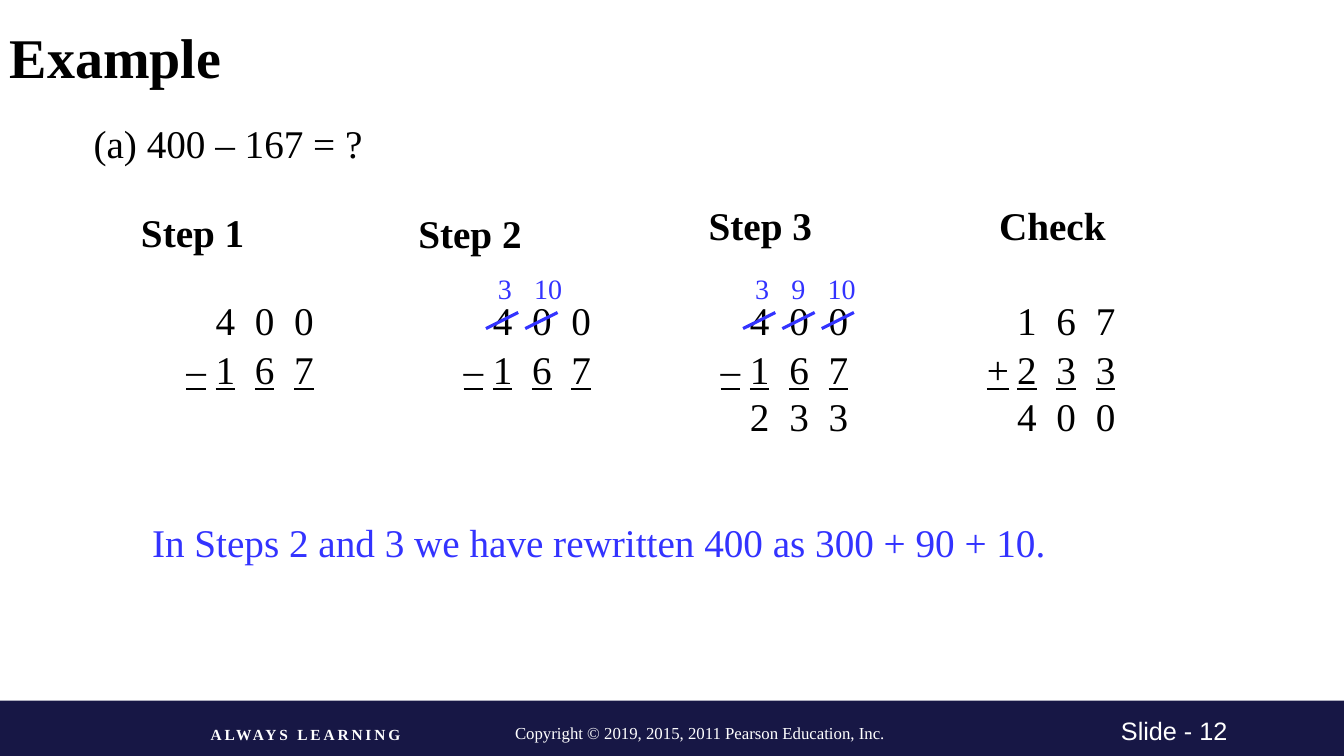
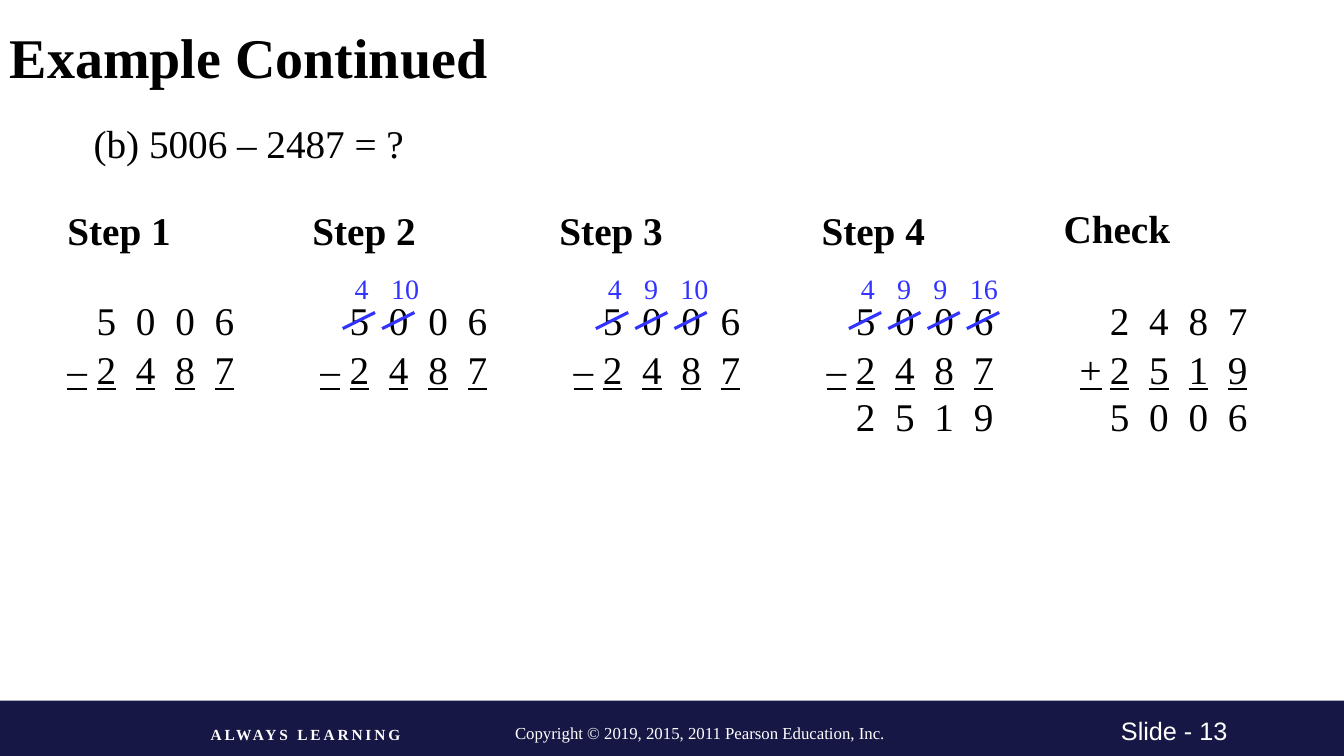
import dataclasses

import pptx
import pptx.dml.color
import pptx.enum.shapes
import pptx.enum.text
import pptx.oxml.ns
import pptx.util
from lxml import etree

Inches = pptx.util.Inches
Pt = pptx.util.Pt

SLIDE_WIDTH, SLIDE_HEIGHT = 13.33, 7.5
SERIF, SANS = "Times New Roman", "Arial"
BLACK, WHITE, NAVY, BLUE = "000000", "FFFFFF", "171745", "3333FF"
BODY_SIZE, CARRY_SIZE = 28, 20

# Digit grid of a worked sum, measured from the left of its box
SUM_TOP, SUM_WIDTH = 2.89, 2.16
FIRST_DIGIT = {"–": 0.29, "+": 0.3}
DIGIT_PITCH = 0.39
CARRY_START, CARRY_PITCH = 0.34, 0.36
STRIKE_START, STRIKE_WIDTH, STRIKE_HEIGHT = 0.32, 0.32, 0.16


@dataclasses.dataclass
class WorkedSum:
    heading: str
    heading_left: float
    heading_top: float
    left: float
    upper: str
    lower: str
    sign: str = "–"
    carries: tuple = ()
    answer: str = ""


def colour(hex_value):
    return pptx.dml.color.RGBColor.from_string(hex_value)


def add_text(slide, box, text, size=BODY_SIZE, ink=BLACK, bold=False,
             font=SERIF, wrap=True, tabs=()):
    """Place text in a box and return its text frame."""
    frame = slide.shapes.add_textbox(*map(Inches, box)).text_frame
    frame.word_wrap = wrap
    frame.text = text
    for paragraph in frame.paragraphs:
        if tabs:
            set_tabs(paragraph, tabs)
        for run in paragraph.runs:
            run.font.name = font
            run.font.size = Pt(size)
            run.font.bold = bold
            run.font.color.rgb = colour(ink)
    return frame


def set_tabs(paragraph, positions):
    qn = pptx.oxml.ns.qn
    properties = paragraph._p.get_or_add_pPr()
    stops = etree.SubElement(properties, qn("a:tabLst"))
    for position in positions:
        etree.SubElement(stops, qn("a:tab"),
                         pos=str(Inches(position)), algn="l")


def add_strike(slide, left, bottom):
    strike = slide.shapes.add_connector(
        pptx.enum.shapes.MSO_CONNECTOR.STRAIGHT,
        Inches(left), Inches(bottom),
        Inches(left + STRIKE_WIDTH), Inches(bottom - STRIKE_HEIGHT))
    strike.line.color.rgb = colour(BLUE)
    strike.line.width = Pt(2.25)
    etree.SubElement(strike._element.spPr, pptx.oxml.ns.qn("a:effectLst"))


def add_footer(slide, number, top=6.95):
    # Band
    band = slide.shapes.add_shape(
        pptx.enum.shapes.MSO_SHAPE.RECTANGLE, 0, Inches(top),
        Inches(SLIDE_WIDTH), Inches(SLIDE_HEIGHT - top))
    band.shadow.inherit = False
    band.fill.solid()
    band.fill.fore_color.rgb = colour(NAVY)
    band.line.fill.background()

    # Copyright, slide number and motto
    add_text(slide, (5.01, top + 0.17, 5.19, 0.3),
             "Copyright © 2019, 2015, 2011 Pearson Education, Inc.", 12, WHITE)
    add_text(slide, (11.02, top + 0.1, 2, 0.4), f"Slide - {number}",
             18, WHITE, font=SANS)
    motto = add_text(slide, (1.99, top + 0.19, 3.09, 0.29),
                     "ALWAYS LEARNING", 11, WHITE, bold=True)
    motto.paragraphs[0].runs[0].font._element.set("spc", "200")


def add_title(slide, text):
    title = add_text(slide, (0, 0.09, SLIDE_WIDTH, 1.05), text, 40, bold=True)
    title.vertical_anchor = pptx.enum.text.MSO_ANCHOR.MIDDLE
    title.paragraphs[0].line_spacing = 0.8


def add_sum(slide, work, top=SUM_TOP):
    add_text(slide, (work.heading_left, work.heading_top, 1.59, 0.57),
             work.heading, bold=True)

    # Two rows of digits, the lower one underlined
    tabs = [FIRST_DIGIT[work.sign] + DIGIT_PITCH * place
            for place in range(len(work.upper))]
    upper, lower, answer = ("".join("\t" + digit for digit in number)
                            for number in (work.upper, work.lower, work.answer))
    rows = add_text(slide, (work.left, top, SUM_WIDTH, 1.24),
                    f"{upper}\n{work.sign}{lower}", tabs=tabs)
    rows.paragraphs[1].space_before = Pt(1.5)
    rows.paragraphs[1].runs[0].font.underline = True

    # Regrouped digits above the struck ones
    for place, carry in enumerate(work.carries):
        carry_left = work.left + CARRY_START + CARRY_PITCH * place
        add_text(slide, (carry_left, top - 0.25, 0.2 + 0.14 * len(carry), 0.44),
                 carry, CARRY_SIZE, BLUE, wrap=False)
        add_strike(slide, work.left + STRIKE_START + DIGIT_PITCH * place,
                   top + 0.37)

    if work.answer:
        add_text(slide, (work.left, top + 0.95, SUM_WIDTH, 0.57), answer,
                 tabs=tabs)


def add_example(deck, number, title, question, sums, remark=""):
    slide = deck.slides.add_slide(deck.slide_layouts[6])
    add_footer(slide, number)
    add_title(slide, title)
    add_text(slide, (0.83, 1.13, 6.95, 0.57), question)
    for work in sums:
        add_sum(slide, work)
    if remark:
        add_text(slide, (1.41, 5.09, 9.22, 0.57), remark, ink=BLUE)


def main():
    deck = pptx.Presentation()
    deck.slide_width = Inches(SLIDE_WIDTH)
    deck.slide_height = Inches(SLIDE_HEIGHT)

    # Example (a)
    add_example(deck, 12, "Example", "(a) 400 – 167 = ?", [
        WorkedSum("Step 1", 1.3, 2.02, 1.75, "400", "167"),
        WorkedSum("Step 2", 4.05, 2.03, 4.5, "400", "167",
                  carries=("3", "10")),
        WorkedSum("Step 3", 6.93, 1.95, 7.05, "400", "167",
                  carries=("3", "9", "10"), answer="233"),
        WorkedSum("Check", 9.81, 1.95, 9.69, "167", "233", "+", answer="400"),
    ], "In Steps 2 and 3 we have rewritten 400 as 300 + 90 + 10.")

    # Example (b), with evenly spaced sums
    lefts = [0.57 + 2.51 * column for column in range(5)]
    add_example(deck, 13, "Example Continued", "(b) 5006 – 2487 = ?", [
        WorkedSum("Step 1", 0.57, 2, lefts[0], "5006", "2487"),
        WorkedSum("Step 2", 3, 2, lefts[1], "5006", "2487",
                  carries=("4", "10")),
        WorkedSum("Step 3", 5.45, 2, lefts[2], "5006", "2487",
                  carries=("4", "9", "10")),
        WorkedSum("Step 4", 8.05, 2, lefts[3], "5006", "2487",
                  carries=("4", "9", "9", "16"), answer="2519"),
        WorkedSum("Check", 10.45, 1.98, lefts[4], "2487", "2519", "+",
                  answer="5006"),
    ])

    deck.save("out.pptx")


if __name__ == "__main__":
    main()
